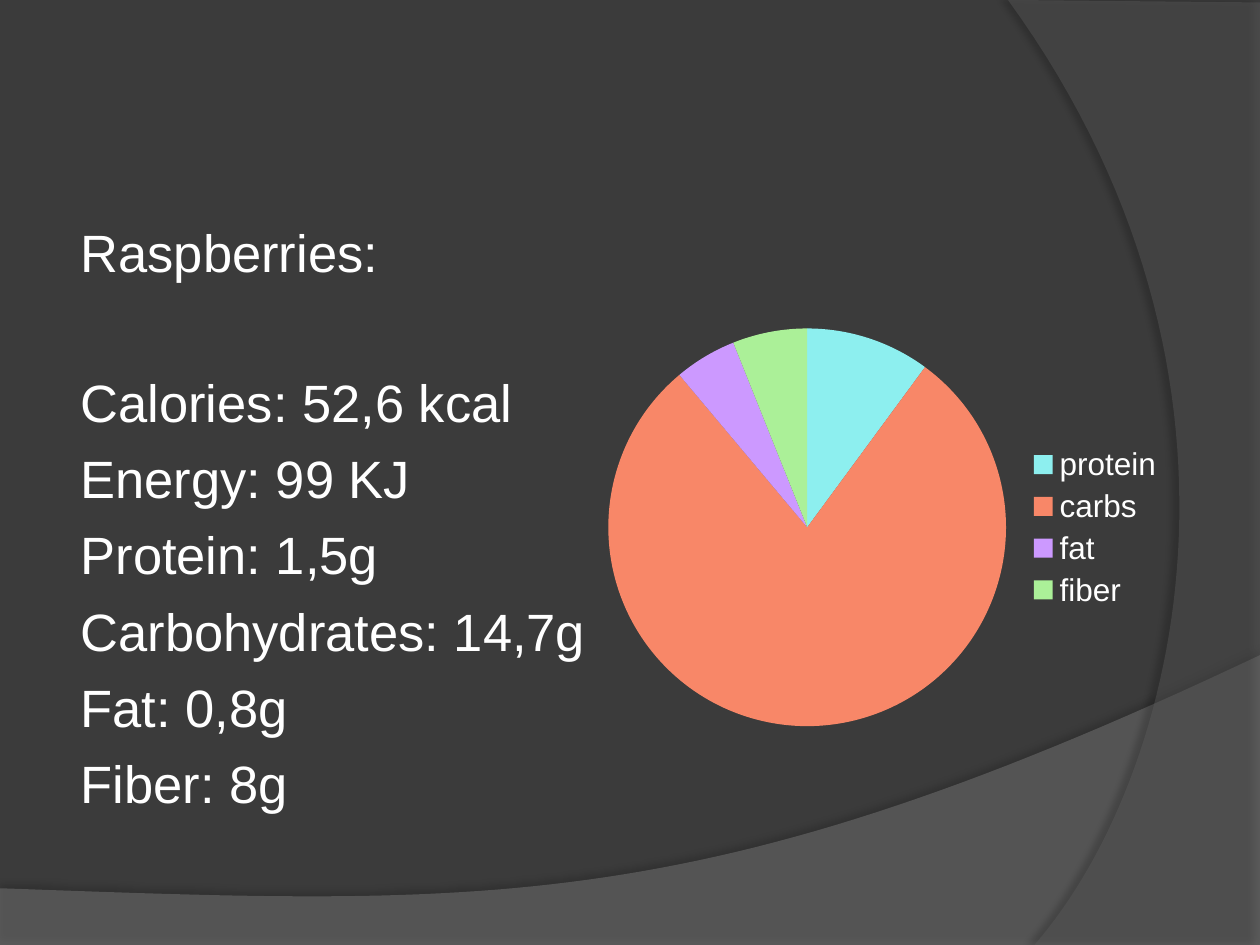
from dataclasses import dataclass

from lxml import etree
from pptx import Presentation
from pptx.chart.data import CategoryChartData
from pptx.dml.color import RGBColor
from pptx.enum.chart import XL_CHART_TYPE, XL_LEGEND_POSITION
from pptx.enum.text import MSO_ANCHOR, MSO_AUTO_SIZE
from pptx.oxml.ns import qn
from pptx.util import Inches, Pt

PIE = XL_CHART_TYPE.PIE
LEGEND_RIGHT = XL_LEGEND_POSITION.RIGHT
ANCHOR_TOP = MSO_ANCHOR.TOP
NO_AUTOFIT = MSO_AUTO_SIZE.NONE
TITLE_AND_CONTENT = 1
CURVE_STEPS = 60


@dataclass(frozen=True)
class Theme:
    font: str = "Arial"
    background: str = "3B3B3B"
    text: str = "FFFFFF"
    shadow: str = "000000"
    lower_wave: str = "7F7F7F"
    right_wave: str = "5E5E5E"
    slices: tuple = ("8DEFEF", "F88768", "CC99FF", "ABF098")
    body_size: int = 30
    legend_size: int = 18
    line_gap: float = 7.5
    heading_gap: float = 49.5


THEME = Theme()
HEADING = "Raspberries:"
FACTS = (
    "Calories: 52,6 kcal",
    "Energy: 99 KJ",
    "Protein: 1,5g",
    "Carbohydrates: 14,7g",
    "Fat: 0,8g",
    "Fiber: 8g",
)
SHARES = {"protein": 10, "carbs": 78, "fat": 5, "fiber": 6}


def color(value):
    return RGBColor.from_string(value)


def curve(start, control_one, control_two, end):
    points = []
    for step in range(CURVE_STEPS + 1):
        t = step / CURVE_STEPS
        weights = ((1 - t) ** 3, 3 * t * (1 - t) ** 2, 3 * t**2 * (1 - t), t**3)
        corners = (start, control_one, control_two, end)
        points.append(tuple(
            sum(weight * corner[axis] for weight, corner in zip(weights, corners))
            for axis in (0, 1)
        ))
    return points


def set_alpha(color_element, percent):
    etree.SubElement(color_element, qn("a:alpha"), val=str(percent * 1000))


def add_shadow(shape, percent, blur, distance, angle):
    shape.shadow.inherit = False
    effects = shape._element.spPr.find(qn("a:effectLst"))
    shadow = etree.SubElement(
        effects, qn("a:outerShdw"), blurRad=str(Pt(blur)), dist=str(Pt(distance)),
        dir=str(angle * 60000), algn="ctr", rotWithShape="0",
    )
    set_alpha(etree.SubElement(shadow, qn("a:srgbClr"), val=THEME.shadow), percent)


def add_wave(page, points, fill, opacity, shadow):
    corners = [(Inches(x), Inches(y)) for x, y in points]
    builder = page.shapes.build_freeform(*corners[0])
    builder.add_line_segments(corners[1:], close=True)
    wave = builder.convert_to_shape()
    wave.fill.solid()
    wave.fill.fore_color.rgb = color(fill)
    set_alpha(wave._element.spPr.find(".//" + qn("a:srgbClr")), opacity)
    wave.line.fill.background()
    add_shadow(wave, *shadow)


def add_backdrop(page, width, height):
    page.background.fill.solid()
    page.background.fill.fore_color.rgb = color(THEME.background)
    lower_edge = curve((width, 5.2), (5.59, 7.29), (3.91, 7.19), (0, 7.05))
    add_wave(page, [(0, height), (width, height), *lower_edge],
             THEME.lower_wave, 45, (35, 4, 3.5, 270))
    right_edge = curve((8.21, height), (9.35, 6.19), (10.18, 3), (8, 0))
    add_wave(page, [(width, 0.02), (width, height), *right_edge],
             THEME.right_wave, 40, (45, 4, 4, 180))


def fill_facts(body, left, top, width, height):
    body.left, body.top = Inches(left), Inches(top)
    body.width, body.height = Inches(width), Inches(height)
    frame = body.text_frame
    frame.text = "\n".join((HEADING, *FACTS))
    frame.word_wrap = True
    frame.auto_size = NO_AUTOFIT
    frame.vertical_anchor = ANCHOR_TOP
    frame.margin_top = 0
    for index, paragraph in enumerate(frame.paragraphs):
        gap = THEME.heading_gap if index == 1 else THEME.line_gap
        paragraph.space_before = Pt(gap)
        properties = paragraph._p.get_or_add_pPr()
        properties.set("marL", str(Inches(0.46)))
        properties.set("indent", str(Inches(-0.42)))
        etree.SubElement(properties, qn("a:buNone"))
        for span in paragraph.runs:
            span.font.name = THEME.font
            span.font.size = Pt(THEME.body_size)
            span.font.color.rgb = color(THEME.text)


def add_share_chart(page, left, top, width, height):
    data = CategoryChartData()
    data.categories = list(SHARES)
    data.add_series("Series 1", list(SHARES.values()))
    chart = page.shapes.add_chart(
        PIE, Inches(left), Inches(top), Inches(width), Inches(height), data
    ).chart
    chart.has_title = False
    chart.font.name = THEME.font
    chart.font.size = Pt(THEME.legend_size)
    chart.font.color.rgb = color(THEME.text)
    chart.has_legend = True
    chart.legend.position = LEGEND_RIGHT
    chart.legend.include_in_layout = False
    plot = chart.plots[0]
    plot.vary_by_categories = True
    for index, fill in enumerate(THEME.slices):
        point = plot.series[0].points[index]
        point.format.fill.solid()
        point.format.fill.fore_color.rgb = color(fill)
        point.format.line.fill.background()


def main():
    deck = Presentation()
    deck.slide_width, deck.slide_height = Inches(10), Inches(7.5)
    page = deck.slides.add_slide(deck.slide_layouts[TITLE_AND_CONTENT])
    title, body = page.placeholders
    title._element.getparent().remove(title._element)
    add_backdrop(page, 10, 7.5)
    page.shapes._spTree.append(body._element)
    fill_facts(body, 0.5, 1.75, 8.17, 4.95)
    add_share_chart(page, 4.69, 1.94, 4.65, 4.49)
    deck.save("out.pptx")


if __name__ == "__main__":
    main()
